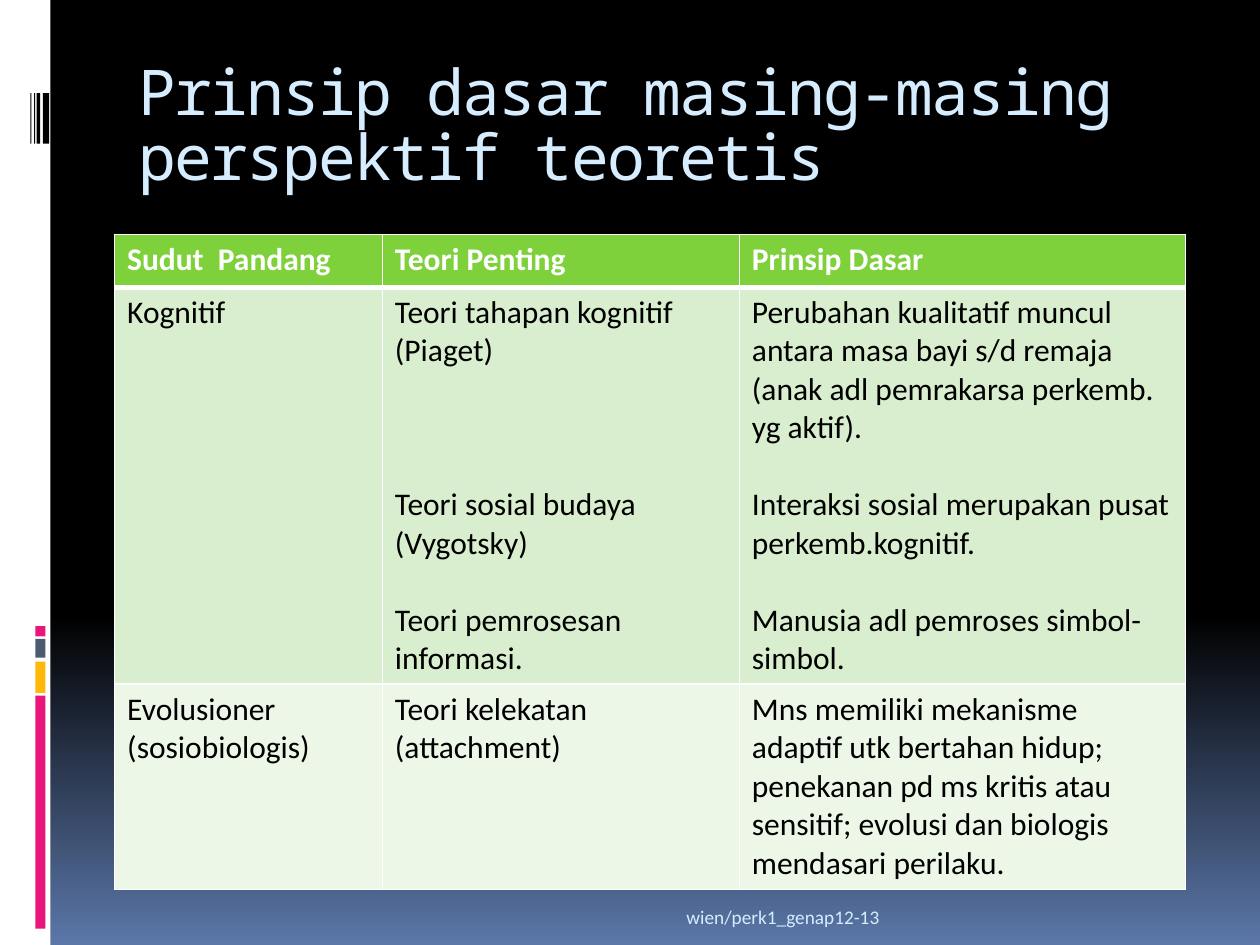
import pptx
import pptx.dml.color
import pptx.enum.shapes
import pptx.enum.text
import pptx.oxml
import pptx.oxml.ns
import pptx.util
from dataclasses import dataclass

Inches, Pt = pptx.util.Inches, pptx.util.Pt
RGB = pptx.dml.color.RGBColor.from_string


@dataclass(frozen=True)
class Theme:
    body_font: str = "Calibri"
    title_font: str = "Noto Sans Mono"
    title_size: int = 36
    body_size: int = 18
    footer_size: int = 11
    title_line: float = 0.86
    body_line: int = 22
    black: str = "000000"
    white: str = "FFFFFF"
    pale_blue: str = "D6ECFF"
    sky: str = "5B77A8"
    pink: str = "EA157A"
    amber: str = "FEB80A"
    slate: str = "4E5B6F"
    header: str = "7FD13B"
    bands: tuple = ("D8EECE", "ECF7E8")


THEME = Theme()
WIDTH, HEIGHT = 10, 7.5
TITLE = "Prinsip dasar masing-masing perspektif teoretis"
FOOTER = "wien/perk1_genap12-13"

# Each paragraph: text, blank lines of space before it
ROWS = [
    [[("Sudut  Pandang", 0)], [("Teori Penting", 0)], [("Prinsip Dasar", 0)]],
    [
        [("Kognitif", 0)],
        [("Teori tahapan kognitif (Piaget)", 0),
         ("Teori sosial budaya (Vygotsky)", 3),
         ("Teori pemrosesan informasi.", 1)],
        [("Perubahan kualitatif muncul antara masa bayi s/d remaja "
          "(anak adl pemrakarsa perkemb. yg aktif).", 0),
         ("Interaksi sosial merupakan pusat perkemb.kognitif.", 1),
         ("Manusia adl pemroses simbol-simbol.", 1)],
    ],
    [
        [("Evolusioner (sosiobiologis)", 0)],
        [("Teori kelekatan (attachment)", 0)],
        [("Mns memiliki mekanisme adaptif utk bertahan hidup; penekanan pd ms "
          "kritis atau sensitif; evolusi dan biologis mendasari perilaku.", 0)],
    ],
]
TABLE_LEFT, TABLE_TOP, TABLE_WIDTH = 0.91, 1.86, 8.5
COLUMN_SHARES = (3, 4, 5)
ROW_HEIGHTS = (0.42, 3.15, 1.63)

COLOUR_BARS = [(4.97, 0.08, THEME.pink), (5.07, 0.15, THEME.slate),
               (5.25, 0.25, THEME.amber), (5.52, 1.85, THEME.pink)]
BARCODE = [(0.24, 0.01), (0.27, 0.01), (0.29, 0.03), (0.34, 0.05)]


def add_bar(page, left, top, width, height, colour):
    bar = page.shapes.add_shape(
        pptx.enum.shapes.MSO_SHAPE.RECTANGLE,
        Inches(left), Inches(top), Inches(width), Inches(height))
    bar.shadow.inherit = False
    bar.fill.solid()
    bar.fill.fore_color.rgb = RGB(colour)
    bar.line.fill.background()


def style(font, name, size, colour, bold=False):
    font.name, font.size, font.bold = name, Pt(size), bold
    font.color.rgb = RGB(colour)


def paint_background(page):
    fill = page.background.fill
    fill.gradient()
    fill.gradient_angle = 270
    for stop, position, colour in zip(
            fill.gradient_stops, (0.65, 1), (THEME.black, THEME.sky)):
        stop.position = position
        stop.color.rgb = RGB(colour)


def add_title(page):
    title = page.shapes.title
    title.left, title.top = Inches(1), Inches(0.36)
    title.width, title.height = Inches(8.5), Inches(1)
    box = title.text_frame
    box.text = TITLE
    box.word_wrap = True
    box.auto_size = pptx.enum.text.MSO_AUTO_SIZE.NONE
    box.vertical_anchor = pptx.enum.text.MSO_ANCHOR.TOP
    box.margin_top = Inches(0.14)
    para = box.paragraphs[0]
    para.alignment = pptx.enum.text.PP_ALIGN.LEFT
    para.line_spacing = THEME.title_line
    style(para.font, THEME.title_font, THEME.title_size, THEME.pale_blue)
    para.runs[0].font.bold = False
    para.runs[0].font._element.set("spc", "-100")


def add_footer(page):
    box = page.shapes.add_textbox(
        Inches(1), Inches(7.02), Inches(6.08), Inches(0.4)).text_frame
    box.text = FOOTER
    box.word_wrap = True
    box.vertical_anchor = pptx.enum.text.MSO_ANCHOR.BOTTOM
    para = box.paragraphs[0]
    para.alignment = pptx.enum.text.PP_ALIGN.RIGHT
    style(para.font, THEME.body_font, THEME.footer_size, THEME.pale_blue)


def set_borders(cell, top, bottom):
    properties = cell._tc.get_or_add_tcPr()
    sides = (("lnL", 1), ("lnR", 1), ("lnT", top), ("lnB", bottom))
    for index, (side, points) in enumerate(sides):
        properties.insert(index, pptx.oxml.parse_xml(
            f'<a:{side} {pptx.oxml.ns.nsdecls("a")} w="{Pt(points)}">'
            f'<a:solidFill><a:srgbClr val="{THEME.white}"/></a:solidFill>'
            f'</a:{side}>'))


def fill_cell(cell, content, row):
    is_header = row == 0
    cell.fill.solid()
    cell.fill.fore_color.rgb = RGB(
        THEME.header if is_header else THEME.bands[row - 1])
    set_borders(cell, 3 if row == 1 else 1, 3 if is_header else 1)
    box = cell.text_frame
    for index, (text, gap) in enumerate(content):
        para = box.add_paragraph() if index else box.paragraphs[0]
        para.text = text
        if gap:
            para.space_before = Pt(gap * THEME.body_line)
        style(para.font, THEME.body_font, THEME.body_size,
              THEME.white if is_header else THEME.black, is_header)


def add_theory_table(page):
    table = page.shapes.add_table(
        len(ROWS), len(COLUMN_SHARES), Inches(TABLE_LEFT), Inches(TABLE_TOP),
        Inches(TABLE_WIDTH), Inches(sum(ROW_HEIGHTS))).table
    for column, share in zip(table.columns, COLUMN_SHARES):
        column.width = Inches(TABLE_WIDTH * share / sum(COLUMN_SHARES))
    for row, height in zip(table.rows, ROW_HEIGHTS):
        row.height = Inches(height)
    for row, contents in enumerate(ROWS):
        for column, content in enumerate(contents):
            fill_cell(table.cell(row, column), content, row)


def main():
    deck = pptx.Presentation()
    deck.slide_width, deck.slide_height = Inches(WIDTH), Inches(HEIGHT)
    page = deck.slides.add_slide(deck.slide_layouts.get_by_name("Title Only"))
    paint_background(page)
    add_bar(page, 0, 0, 0.4, HEIGHT, THEME.white)
    for top, height, colour in COLOUR_BARS:
        add_bar(page, 0.28, top, 0.08, height, colour)
    for left, width in BARCODE:
        add_bar(page, left, 0.74, width, 0.4, THEME.black)
    add_footer(page)
    add_theory_table(page)
    add_title(page)
    deck.save("out.pptx")


if __name__ == "__main__":
    main()
